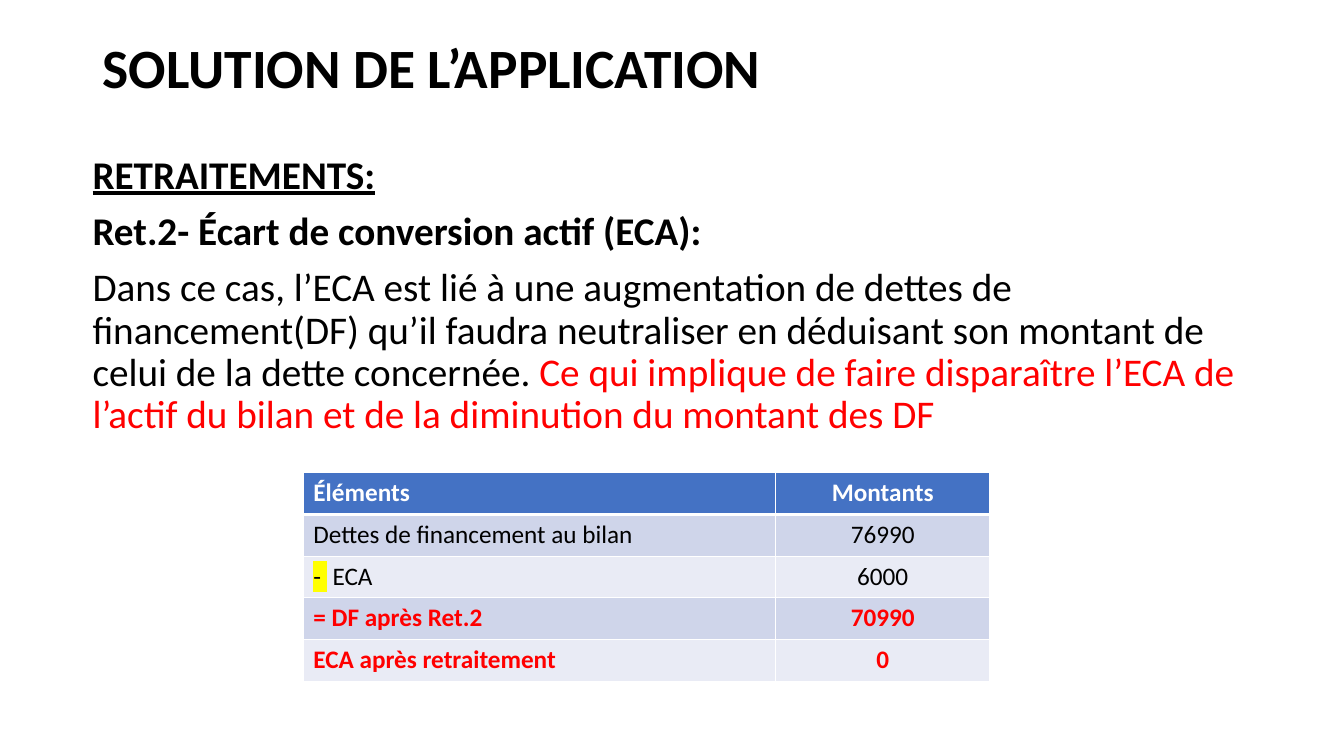
from dataclasses import dataclass

from lxml.etree import SubElement
from pptx import Presentation
from pptx.dml.color import RGBColor
from pptx.enum.text import MSO_ANCHOR, MSO_AUTO_SIZE, PP_ALIGN
from pptx.oxml.ns import qn
from pptx.util import Pt

TITLE = "SOLUTION DE L’APPLICATION"
HEADINGS = [("RETRAITEMENTS:", True), ("Ret.2- Écart de conversion actif (ECA):", False)]
EXPLANATION = (
    "Dans ce cas, l’ECA est lié à une augmentation de dettes de financement(DF) "
    "qu’il faudra neutraliser en déduisant son montant de celui de la dette concernée. "
)
CONSEQUENCE = (
    "Ce qui implique de faire disparaître l’ECA de l’actif du bilan "
    "et de la diminution du montant des DF"
)
MINUS_SIGN = "- "
AMOUNTS = [
    ("Éléments", "Montants"),
    ("Dettes de financement au bilan", "76990"),
    (MINUS_SIGN + " ECA", "6000"),
    ("= DF après Ret.2", "70990"),
    ("ECA après retraitement", "0"),
]
RESULT_ROWS = (3, 4)

SLIDE_SIZE = (960, 540)
TITLE_BOX = (66.24, 28.8, 828, 42.48)
BODY_BOX = (59.04, 107.28, 835.2, 378.72)
TABLE_ORIGIN = (216.72, 337.68)
COLUMN_WIDTHS = (337.3, 153)
ROW_HEIGHT = 29.8


@dataclass(frozen=True)
class Theme:
    """Colours, font and type sizes of the slide."""

    font: str = "Calibri"
    title_size: float = 39.6
    body_size: float = 28
    table_size: float = 18
    ink: str = "000000"
    accent: str = "FF0000"
    white: str = "FFFFFF"
    header: str = "4472C4"
    bands: tuple = ("E9EBF5", "CFD5EA")
    marker: str = "FFFF00"


THEME = Theme()


def format_paragraph(paragraph, size, color, bold, align=PP_ALIGN.LEFT):
    """Set the font and alignment of a whole paragraph."""
    paragraph.alignment = align
    font = paragraph.font
    font.name, font.size, font.bold = THEME.font, Pt(size), bold
    font.color.rgb = RGBColor.from_string(color)


def add_solid(parent, color):
    """Add a solid colour to a line or other XML element."""
    solid = SubElement(parent, qn("a:solidFill"))
    SubElement(solid, qn("a:srgbClr"), val=color)


def highlight(run, color):
    """Mark a run with a highlight colour."""
    mark = SubElement(run.font._element, qn("a:highlight"))
    SubElement(mark, qn("a:srgbClr"), val=color)


def add_title(slide):
    """Place and format the title."""
    title = slide.shapes.title
    title.left, title.top, title.width, title.height = map(Pt, TITLE_BOX)
    frame = title.text_frame
    frame.text = TITLE
    frame.auto_size = MSO_AUTO_SIZE.NONE
    frame.vertical_anchor = MSO_ANCHOR.MIDDLE
    paragraph = frame.paragraphs[0]
    paragraph.line_spacing = 0.9
    format_paragraph(paragraph, THEME.title_size, THEME.ink, True)


def add_body(slide):
    """Write the headings and the explanation."""
    frame = slide.shapes.add_textbox(*map(Pt, BODY_BOX)).text_frame
    frame.word_wrap = True
    for heading, underlined in HEADINGS:
        paragraph = frame.paragraphs[0] if underlined else frame.add_paragraph()
        paragraph.text = heading
        format_paragraph(paragraph, THEME.body_size, THEME.ink, True)
        paragraph.font.underline = underlined
    explanation = frame.add_paragraph()
    explanation.text = EXPLANATION
    format_paragraph(explanation, THEME.body_size, THEME.ink, False)
    consequence = explanation.add_run()
    consequence.text = CONSEQUENCE
    consequence.font.color.rgb = RGBColor.from_string(THEME.accent)
    for paragraph in frame.paragraphs:
        paragraph.line_spacing = 0.9
        paragraph.space_before = Pt(10)


def style_cell(cell, row, fill):
    """Give a cell its white borders and its fill."""
    properties = cell._tc.get_or_add_tcPr()
    thick_side = {0: "B", 1: "T"}.get(row)
    for side in "LRTB":
        width = Pt(3 if side == thick_side else 1)
        border = SubElement(properties, qn(f"a:ln{side}"), w=str(width))
        add_solid(border, THEME.white)
    cell.fill.solid()
    cell.fill.fore_color.rgb = RGBColor.from_string(fill)


def add_amounts(slide):
    """Build the table of amounts."""
    size = (sum(COLUMN_WIDTHS), ROW_HEIGHT * len(AMOUNTS))
    table = slide.shapes.add_table(
        len(AMOUNTS), len(COLUMN_WIDTHS), *map(Pt, TABLE_ORIGIN + size)
    ).table
    for column, width in zip(table.columns, COLUMN_WIDTHS):
        column.width = Pt(width)
    for row, entries in enumerate(AMOUNTS):
        table.rows[row].height = Pt(ROW_HEIGHT)
        is_header, is_result = row == 0, row in RESULT_ROWS
        fill = THEME.header if is_header else THEME.bands[row % 2]
        color = THEME.white if is_header else THEME.accent if is_result else THEME.ink
        for column, entry in enumerate(entries):
            cell = table.cell(row, column)
            style_cell(cell, row, fill)
            paragraph = cell.text_frame.paragraphs[0]
            align = PP_ALIGN.CENTER if column else PP_ALIGN.LEFT
            format_paragraph(paragraph, THEME.table_size, color, is_header or is_result, align)
            if entry.startswith(MINUS_SIGN):
                sign = paragraph.add_run()
                sign.text = MINUS_SIGN
                highlight(sign, THEME.marker)
            paragraph.add_run().text = entry.removeprefix(MINUS_SIGN)


def main():
    """Build and save the slide."""
    deck = Presentation()
    deck.slide_width, deck.slide_height = map(Pt, SLIDE_SIZE)
    slide = deck.slides.add_slide(deck.slide_layouts[5])
    add_title(slide)
    add_body(slide)
    add_amounts(slide)
    deck.save("out.pptx")


if __name__ == "__main__":
    main()
